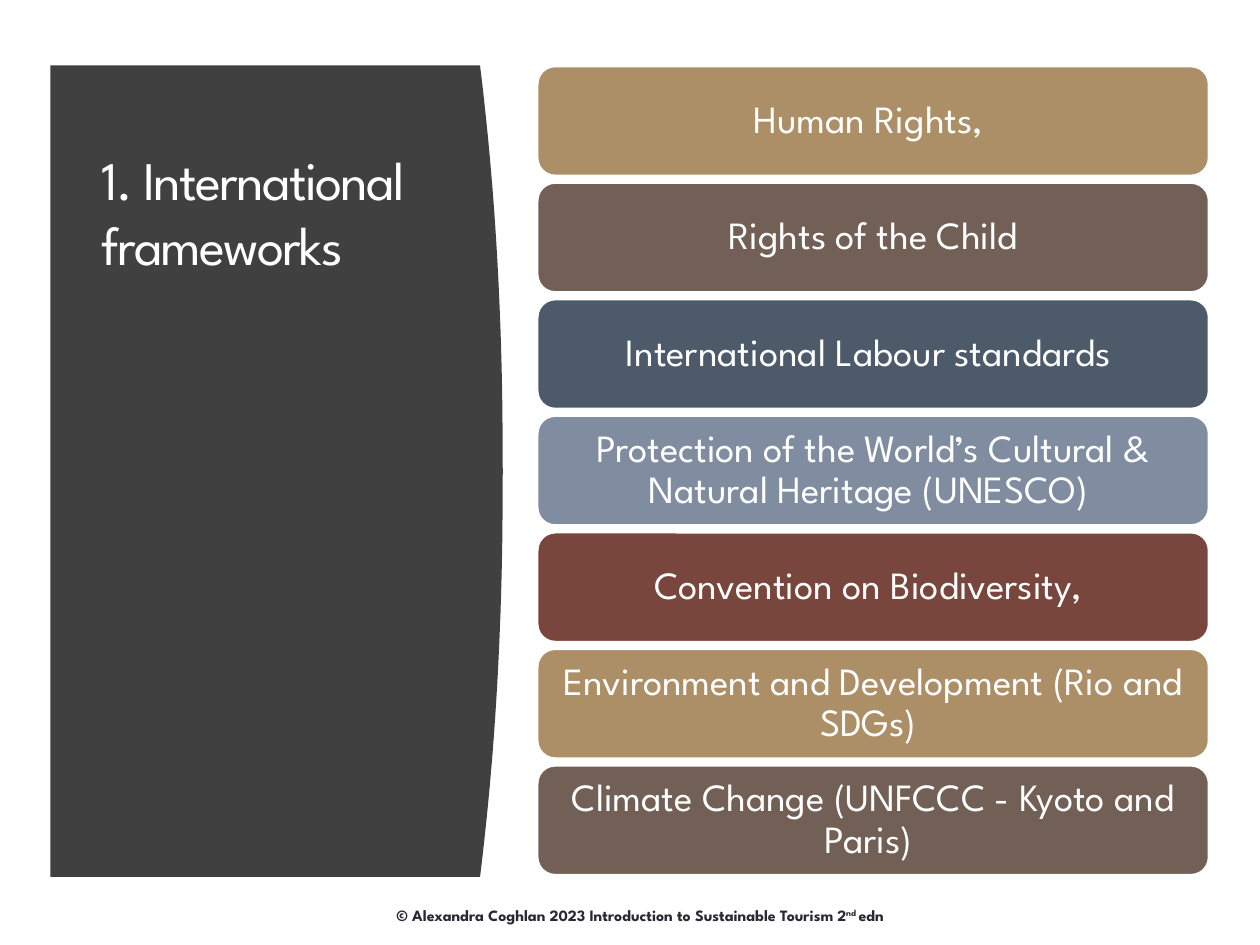
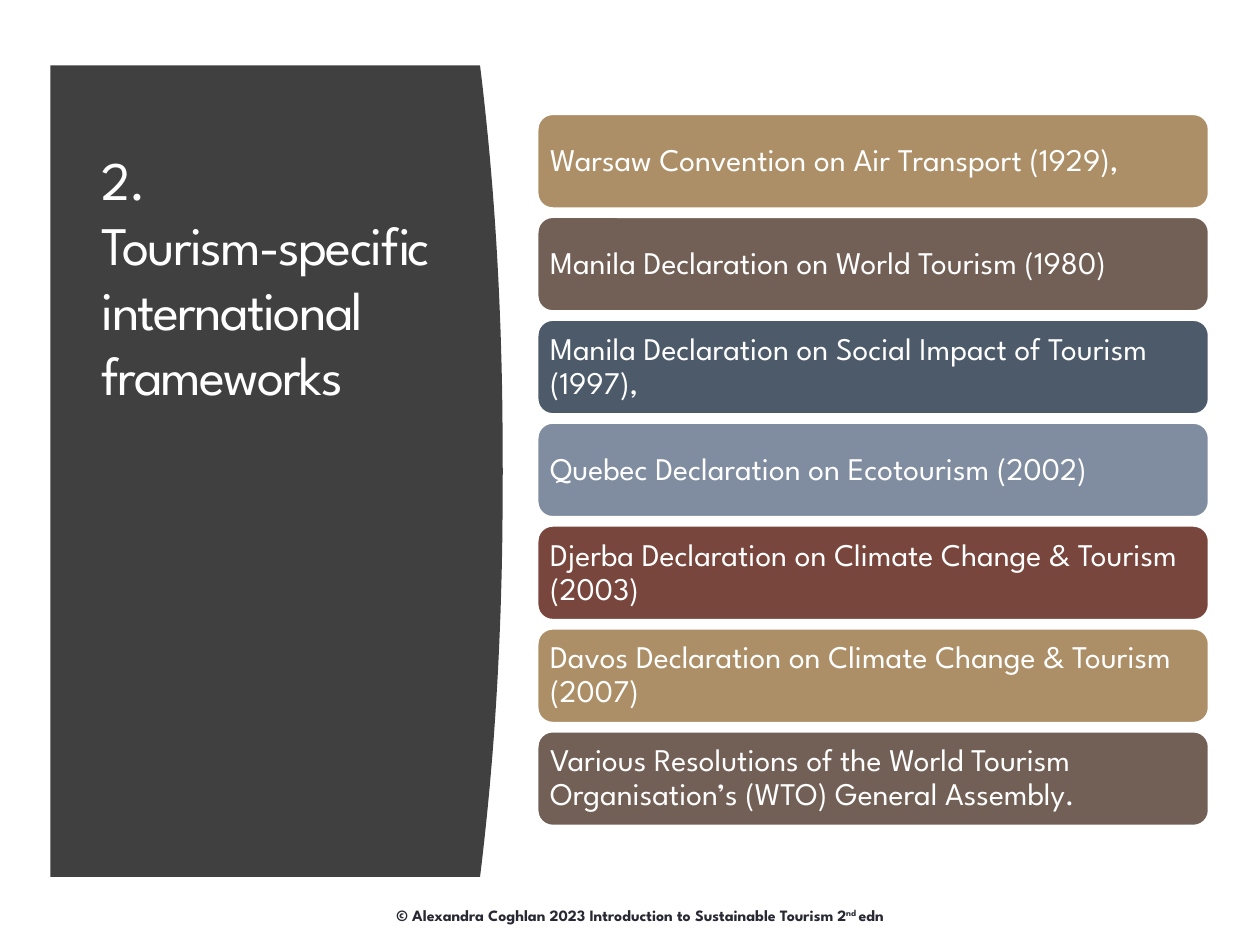
"""Build two slides on frameworks for sustainable tourism."""
from pptx import Presentation
from pptx import util as u
from pptx.dml import color
from pptx.enum import shapes, text

PX = 9144
FONT = "League Spartan"
COLOURS = {
    "panel": "404040", "white": "FFFFFF", "footer": "292934",
    "sand": "AD8F67", "brown": "726056", "navy": "4C5A6A",
    "steel": "808DA0", "brick": "79463D",
}
CARD_ORDER = ["sand", "brown", "navy", "steel", "brick"]
PANEL = {"left": 40, "top": 52, "bottom": 696, "corner": 381, "bulge": 18}
CARD_LEFT, CARD_WIDTH = 426, 534

SLIDES = [
    {
        "title": "1. International frameworks",
        "cards": [
            "Human Rights, ",
            "Rights of the Child",
            "International Labour standards ",
            "Protection of the World’s Cultural & Natural Heritage (UNESCO) ",
            "Convention on Biodiversity, ",
            "Environment and Development (Rio and SDGs) ",
            "Climate Change (UNFCCC - Kyoto and Paris) ",
        ],
        "layout": {"first_top": 52, "last_top": 607, "height": 88, "size": 22,
                   "align": text.PP_ALIGN.CENTER, "insets": (9, 5)},
    },
    {
        "title": "2. \vTourism-specific international frameworks",
        "cards": [
            "Warsaw Convention on Air Transport (1929),",
            "Manila Declaration on World Tourism (1980)",
            "Manila Declaration on Social Impact of Tourism (1997),",
            "Quebec Declaration on Ecotourism (2002)",
            "Djerba Declaration on Climate Change & Tourism (2003)",
            "Davos Declaration on Climate Change & Tourism (2007)",
            "Various Resolutions of the World Tourism Organisation’s (WTO) General Assembly.",
        ],
        "layout": {"first_top": 90, "last_top": 580, "height": 76, "size": 18,
                   "align": text.PP_ALIGN.LEFT, "insets": (7, 7)},
    },
]


def px(length):
    """Turn px into EMU."""
    return u.Emu(round(length * PX))


def rgb(name):
    """Look up a named colour."""
    return color.RGBColor.from_string(COLOURS[name])


def apply(target, formats):
    """Set each attribute of target from a dict."""
    for attribute, value in formats.items():
        setattr(target, attribute, value)


def style_run(run, size, colour, bold=False, **extras):
    """Format a run, with extras as raw run properties."""
    apply(run.font, {"name": FONT, "size": u.Pt(size), "bold": bold})
    run.font.color.rgb = rgb(colour)
    for key, value in extras.items():
        run._r.get_or_add_rPr().set(key, str(value))


def fill_shape(shape, colour):
    """Give a shape a flat fill without shadow."""
    shape.shadow.inherit = False
    shape.fill.solid()
    shape.fill.fore_color.rgb = rgb(colour)


def add_text_frame(slide, left, top, width, height):
    """Add a wrapping text box and return its frame."""
    frame = slide.shapes.add_textbox(px(left), px(top), px(width), px(height)).text_frame
    frame.word_wrap = True
    return frame


def add_panel(slide):
    """Draw the dark panel with its bulging right edge."""
    top, bottom, left = PANEL["top"], PANEL["bottom"], PANEL["left"]
    middle, half = (top + bottom) / 2, (bottom - top) / 2
    edge = [(PANEL["corner"] + PANEL["bulge"] * (1 - abs((y - middle) / half) ** 2.2), y)
            for y in range(top, bottom + 1, 14)]
    outline = slide.shapes.build_freeform(px(left), px(top), scale=1.0)
    outline.add_line_segments([(px(x), px(y)) for x, y in edge + [(left, bottom)]])
    panel = outline.convert_to_shape()
    fill_shape(panel, "panel")
    panel.line.fill.background()


def add_title(slide, title):
    """Write the heading on the panel."""
    frame = add_text_frame(slide, 71, 111, 280, 524)
    frame.margin_right = px(5)
    frame.text = title
    for run in frame.paragraphs[0].runs:
        style_run(run, 31, "white", spc=-100)


def add_footer(slide):
    """Write the copyright line."""
    line = add_text_frame(slide, 272, 714, 472, 25).paragraphs[0]
    line.alignment = text.PP_ALIGN.CENTER
    parts = [("© Alexandra Coghlan 2023 Introduction to Sustainable Tourism 2", 0),
             ("nd ", 30000), ("edn", 0)]
    for words, baseline in parts:
        run = line.add_run()
        run.text = words
        style_run(run, 9, "footer", bold=True, baseline=baseline)


def add_card(slide, words, top, colour, layout):
    """Draw one rounded card with its text."""
    card = slide.shapes.add_shape(
        shapes.MSO_SHAPE.ROUNDED_RECTANGLE,
        px(CARD_LEFT), px(top), px(CARD_WIDTH), px(layout["height"]))
    fill_shape(card, colour)
    card.line.color.rgb = rgb("white")
    card.line.width = u.Pt(2.08)
    side, end = map(px, layout["insets"])
    apply(card.text_frame, {
        "word_wrap": True, "vertical_anchor": text.MSO_ANCHOR.MIDDLE,
        "margin_left": side, "margin_right": side,
        "margin_top": end, "margin_bottom": end})
    paragraph = card.text_frame.paragraphs[0]
    apply(paragraph, {"text": words, "alignment": layout["align"], "line_spacing": 0.9})
    style_run(paragraph.runs[0], layout["size"], "white")


def add_cards(slide, cards, layout):
    """Stack the cards at an equal pitch."""
    pitch = (layout["last_top"] - layout["first_top"]) / (len(cards) - 1)
    for index, words in enumerate(cards):
        colour = CARD_ORDER[index % len(CARD_ORDER)]
        add_card(slide, words, layout["first_top"] + index * pitch, colour, layout)


def main():
    """Build and save the deck."""
    deck = Presentation()
    apply(deck, {"slide_width": px(1000), "slide_height": px(750)})
    for content in SLIDES:
        slide = deck.slides.add_slide(deck.slide_layouts[6])
        add_footer(slide)
        add_panel(slide)
        add_title(slide, content["title"])
        add_cards(slide, content["cards"], content["layout"])
    deck.save("out.pptx")


if __name__ == "__main__":
    main()
